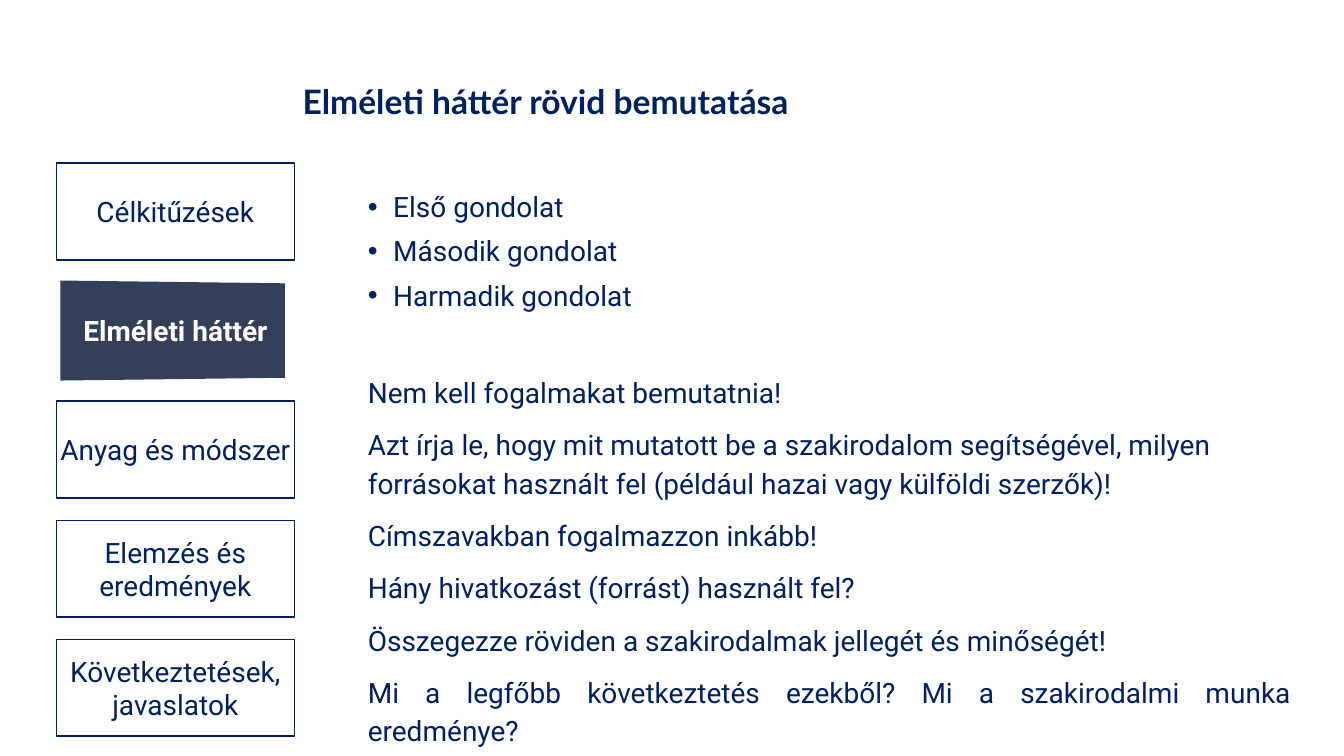
from dataclasses import dataclass

from lxml import etree
from pptx import Presentation
from pptx.dml.color import RGBColor
from pptx.enum.shapes import MSO_SHAPE
from pptx.enum.text import MSO_ANCHOR, MSO_AUTO_SIZE, PP_ALIGN
from pptx.oxml.ns import qn
from pptx.util import Cm, Pt

LEFT, CENTER, JUSTIFY = PP_ALIGN.LEFT, PP_ALIGN.CENTER, PP_ALIGN.JUSTIFY
TOP, MIDDLE, BOTTOM = MSO_ANCHOR.TOP, MSO_ANCHOR.MIDDLE, MSO_ANCHOR.BOTTOM
NO_AUTOFIT = MSO_AUTO_SIZE.NONE
RECTANGLE = MSO_SHAPE.RECTANGLE
TITLE_ONLY = 5


@dataclass(frozen=True)
class Theme:
    navy: RGBColor = RGBColor(0x00, 0x20, 0x60)
    active: RGBColor = RGBColor(0x34, 0x3F, 0x59)
    white: RGBColor = RGBColor(0xFF, 0xFF, 0xFF)
    title_font: str = "Lato"
    text_font: str = "Roboto"
    title_size: Pt = Pt(24)
    text_size: Pt = Pt(20)


THEME = Theme()
TITLE = "Elméleti háttér rövid bemutatása"
SECTIONS = ["Célkitűzések", "Elméleti háttér", "Anyag és módszer",
            "Elemzés és eredmények", "Következtetések, javaslatok"]
ACTIVE_SECTION = "Elméleti háttér"
TIGHT_SECTION = "Anyag és módszer"
THOUGHTS = ["Első gondolat", "Második gondolat", "Harmadik gondolat"]
ADVICE = [
    ("Nem kell fogalmakat bemutatnia!", JUSTIFY),
    ("Azt írja le, hogy mit mutatott be a szakirodalom segítségével, milyen "
     "forrásokat használt fel (például hazai vagy külföldi szerzők)!", LEFT),
    ("Címszavakban fogalmazzon inkább!", JUSTIFY),
    ("Hány hivatkozást (forrást) használt fel?", JUSTIFY),
    ("Összegezze röviden a szakirodalmak jellegét és minőségét!", JUSTIFY),
    ("Mi a legfőbb következtetés ezekből? Mi a szakirodalmi munka eredménye?", JUSTIFY),
]


def apply(target, formats):
    for name, value in formats.items():
        setattr(target, name, value)


def write(para, text, color=THEME.navy, font=None, **formats):
    """Fill one paragraph; font overrides the theme's text style."""
    apply(para, formats)
    span = para.add_run()
    span.text = text
    style = {"name": THEME.text_font, "size": THEME.text_size, "bold": False}
    apply(span.font, style | (font or {}))
    span.font.color.rgb = color


def add_bullet(para):
    properties = para._p.get_or_add_pPr()
    properties.set("marL", str(Cm(0.64)))
    properties.set("indent", str(-Cm(0.64)))
    for tag, attribute, value in (("a:buFont", "typeface", "Arial"), ("a:buChar", "char", "•")):
        etree.SubElement(properties, qn(tag)).set(attribute, value)


def place_title(page, left, top, width, height):
    box = page.shapes.title
    apply(box, {"left": left, "top": top, "width": width, "height": height})
    apply(box.text_frame, {"vertical_anchor": BOTTOM, "word_wrap": True, "auto_size": NO_AUTOFIT})
    write(box.text_frame.paragraphs[0], TITLE, alignment=LEFT, line_spacing=0.9,
          font={"name": THEME.title_font, "size": THEME.title_size, "bold": True})


def add_active_outline(page, left, top, width, height):
    """Draw the current section as a panel turned slightly away on its right."""
    near_left, far_right = left + Cm(0.1), left + width - Cm(0.24)
    rise, drop = Cm(0.04), Cm(0.03)
    outline = page.shapes.build_freeform(near_left, top - rise)
    outline.add_line_segments([
        (far_right, top + drop),
        (far_right, top + height - drop),
        (near_left, top + height + rise),
    ], close=True)
    return outline.convert_to_shape()


def add_navigation(page, left, top, width, height, pitch):
    for index, section in enumerate(SECTIONS):
        active = section == ACTIVE_SECTION
        place = (left, top + index * pitch, width, height)
        if active:
            box = add_active_outline(page, *place)
            box.line.fill.background()
        else:
            box = page.shapes.add_shape(RECTANGLE, *place)
            box.line.color.rgb = THEME.navy
            box.line.width = Pt(1)
        box.shadow.inherit = False
        box.fill.solid()
        box.fill.fore_color.rgb = THEME.active if active else THEME.white
        frame = box.text_frame
        apply(frame, {"vertical_anchor": MIDDLE, "word_wrap": True})
        if section == TIGHT_SECTION:
            apply(frame, {"margin_left": 0, "margin_right": 0})
        elif active:
            apply(frame, {"margin_left": Cm(0.3), "margin_right": Cm(0.15)})
        write(frame.paragraphs[0], section, THEME.white if active else THEME.navy,
              {"bold": active}, alignment=CENTER)


def add_body(page, left, top, width, height):
    frame = page.shapes.add_textbox(left, top, width, height).text_frame
    apply(frame, {"vertical_anchor": TOP, "word_wrap": True, "auto_size": NO_AUTOFIT})
    for index, thought in enumerate(THOUGHTS):
        para = frame.add_paragraph() if index else frame.paragraphs[0]
        add_bullet(para)
        write(para, thought, alignment=JUSTIFY, line_spacing=0.9,
              space_before=Pt(10 if index else 0))
    for index, (advice, alignment) in enumerate(ADVICE):
        write(frame.add_paragraph(), advice, alignment=alignment, line_spacing=1.14,
              space_before=Pt(10 if index else 42))


def main():
    deck = Presentation()
    apply(deck, {"slide_width": Cm(33.87), "slide_height": Cm(19.05)})
    page = deck.slides.add_slide(deck.slide_layouts[TITLE_ONLY])
    add_navigation(page, Cm(1.42), Cm(4.11), Cm(6), Cm(2.44), pitch=Cm(3))
    add_body(page, Cm(9.02), Cm(4.75), Cm(23.77), Cm(14.3))
    place_title(page, Cm(7.37), Cm(1.93), Cm(19.15), Cm(1.27))
    deck.save("out.pptx")


if __name__ == "__main__":
    main()
